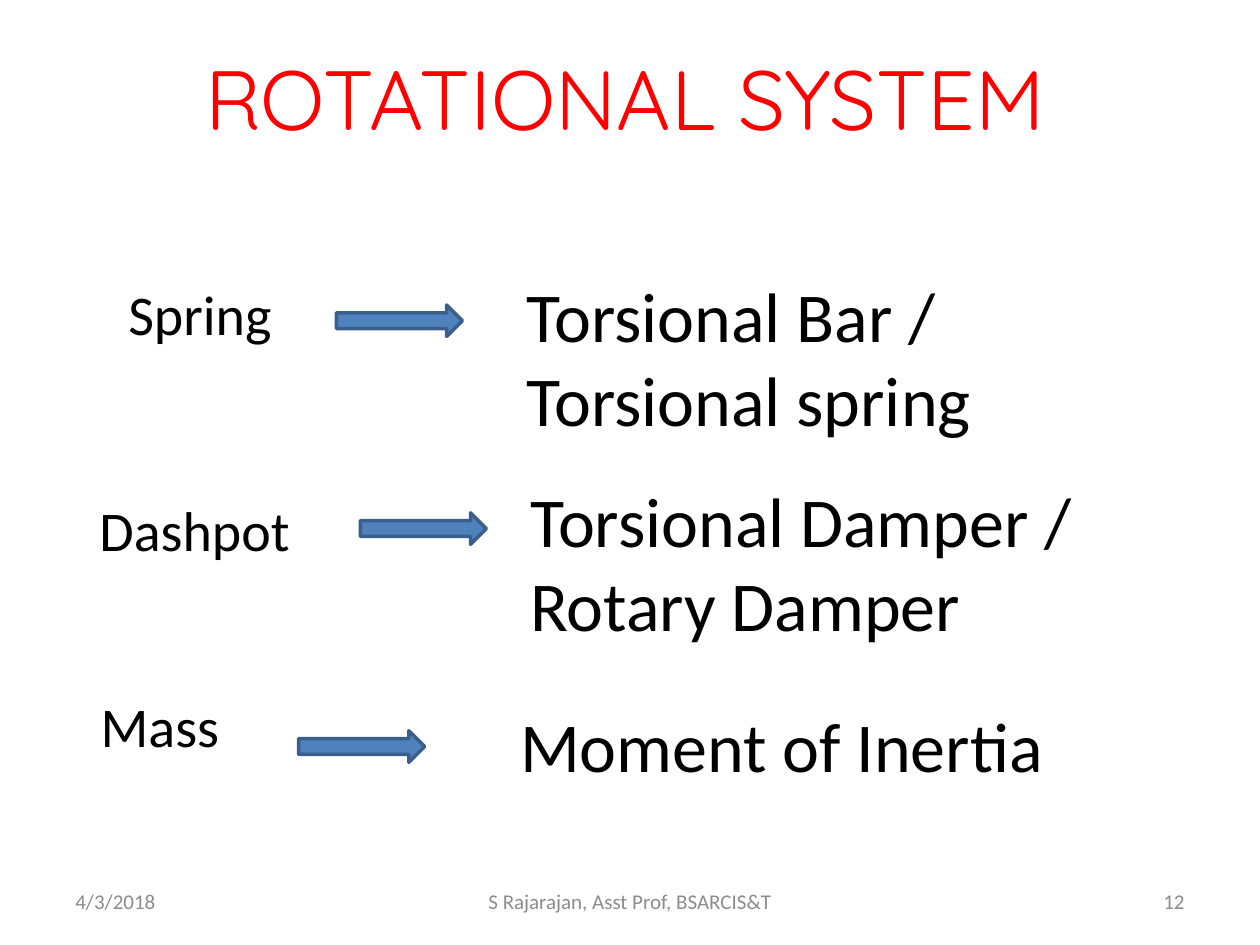
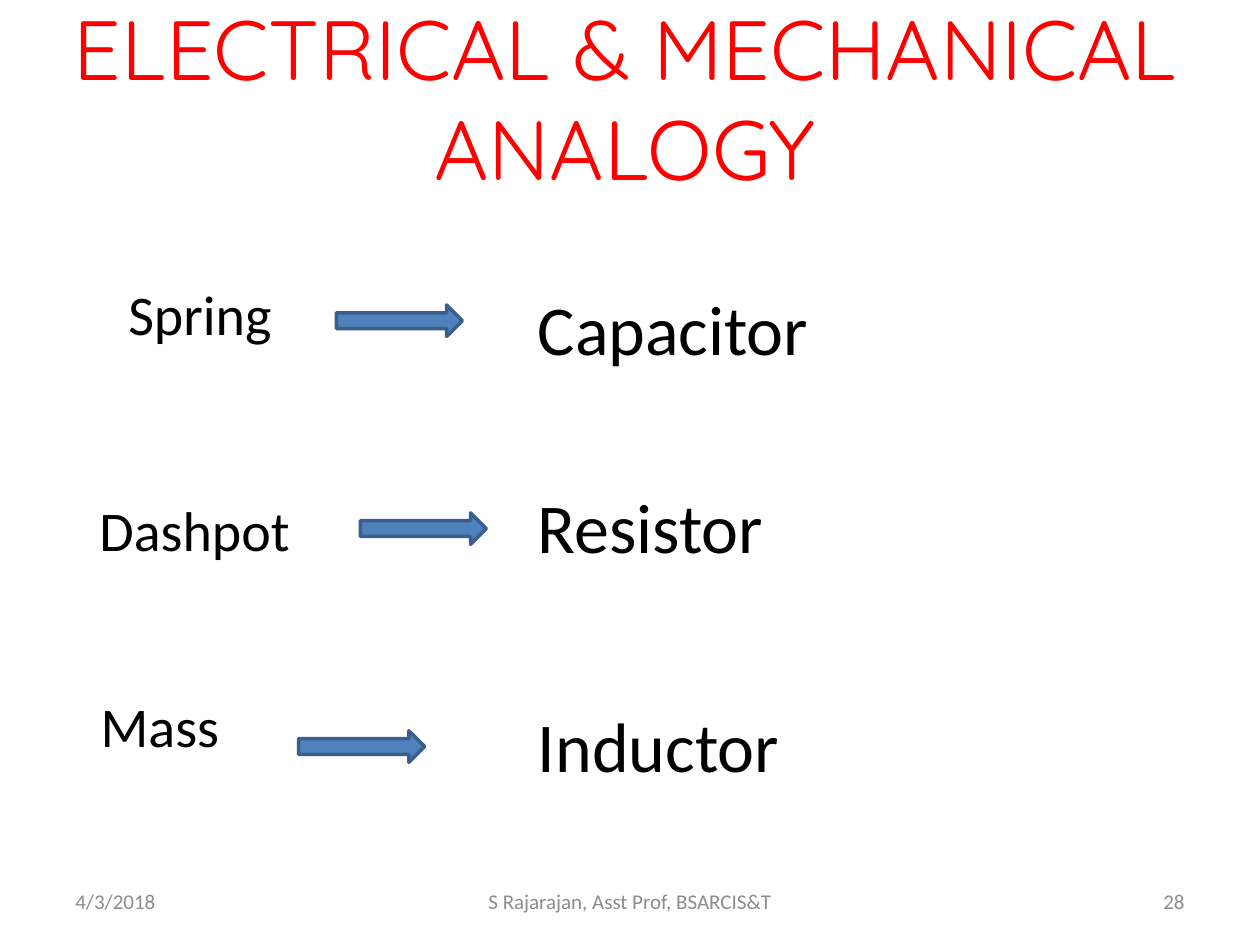
import pptx
import pptx.dml.color
import pptx.enum.shapes
import pptx.enum.text
import pptx.util

Inches = pptx.util.Inches
RGBColor = pptx.dml.color.RGBColor
ALIGN = pptx.enum.text.PP_ALIGN
ANCHOR = pptx.enum.text.MSO_ANCHOR

RED = RGBColor(0xFF, 0x00, 0x00)
BLACK = RGBColor(0x00, 0x00, 0x00)
GRAY = RGBColor(0x8C, 0x8C, 0x8C)
BLUE = RGBColor(0x4F, 0x81, 0xBD)
DARK_BLUE = RGBColor(0x3A, 0x5F, 0x8C)

TITLE_FONT = "Quicksand"
BODY_FONT = "Calibri"

# Boxes are left, top, width, height in inches
TITLE_BOX = (-0.58, 0.52, 11.08, 0.5)
FOOTER_BOX = (0.5, 6.95, 9, 0.4)
BODY_BOX = (0.69, 2.11, 8.4, 4.2)

DATE = "4/3/2018"
AUTHOR = "S Rajarajan, Asst Prof, BSARCIS&T"

# Mechanical elements: name, label box and arrow corner, relative to the body
ELEMENTS = [
    ("Spring", (0.23, 0.06, 1.5, 0.64), (1.98, 0.31)),
    ("Dashpot", (0, 1.77, 1.75, 0.64), (2.17, 1.96)),
    ("Mass", (0.01, 3.33, 1.5, 0.64), (1.68, 3.69)),
]

# Title, slide number, and the counterpart of each element with its box
SLIDES = [
    ("ROTATIONAL SYSTEM", 12, [
        ("Torsional Bar / Torsional spring", (3.39, 0, 4.92, 1.45)),
        ("Torsional Damper / Rotary Damper", (3.42, 1.63, 4.83, 1.45)),
        ("Moment of Inertia", (3.34, 3.42, 4.5, 0.77)),
    ]),
    ("ELECTRICAL & MECHANICAL ANALOGY", 28, [
        ("Capacitor", (3.48, 0.11, 4.5, 0.77)),
        ("Resistor", (3.48, 1.68, 4.83, 0.77)),
        ("Inductor", (3.48, 3.42, 4.92, 0.77)),
    ]),
]


def within(outer, box):
    """Turn a box relative to outer into one relative to the slide."""
    return (outer[0] + box[0], outer[1] + box[1], *box[2:])


def add_text(slide, box, text, size, color=BLACK, font=BODY_FONT,
             align=ALIGN.LEFT, anchor=ANCHOR.TOP):
    shape = slide.shapes.add_textbox(*map(Inches, box))
    frame = shape.text_frame
    frame.word_wrap = True
    frame.vertical_anchor = anchor
    paragraph = frame.paragraphs[0]
    paragraph.text = text
    paragraph.alignment = align
    paragraph.font.size = pptx.util.Pt(size)
    paragraph.font.name = font
    paragraph.font.color.rgb = color


def add_arrow(slide, box):
    shape = slide.shapes.add_shape(
        pptx.enum.shapes.MSO_SHAPE.RIGHT_ARROW, *map(Inches, box))
    shape.shadow.inherit = False
    shape.fill.solid()
    shape.fill.fore_color.rgb = BLUE
    shape.line.color.rgb = DARK_BLUE
    shape.line.width = pptx.util.Pt(2)


def add_title(slide, box, title):
    add_text(slide, box, title, 48, RED, TITLE_FONT, ALIGN.CENTER, ANCHOR.MIDDLE)


def add_footer(slide, box, number):
    width, height = box[2:]
    side, middle = 2.33, 3.17
    parts = [
        (DATE, 0, side, ALIGN.LEFT),
        (AUTHOR, (width - middle) / 2, middle, ALIGN.CENTER),
        (str(number), width - side, side, ALIGN.RIGHT),
    ]
    for text, left, part_width, align in parts:
        add_text(slide, within(box, (left, 0, part_width, height)), text, 12,
                 GRAY, align=align, anchor=ANCHOR.MIDDLE)


def add_analogies(slide, box, counterparts):
    for element, counterpart in zip(ELEMENTS, counterparts):
        name, label_box, arrow_corner = element
        text, text_box = counterpart
        add_text(slide, within(box, label_box), name, 32)
        add_arrow(slide, within(box, (*arrow_corner, 1, 0.25)))
        add_text(slide, within(box, text_box), text, 40)


def main():
    presentation = pptx.Presentation()
    presentation.slide_width = Inches(10)
    presentation.slide_height = Inches(7.5)
    blank = presentation.slide_layouts[6]
    for title, number, counterparts in SLIDES:
        slide = presentation.slides.add_slide(blank)
        add_title(slide, TITLE_BOX, title)
        add_analogies(slide, BODY_BOX, counterparts)
        add_footer(slide, FOOTER_BOX, number)
    presentation.save("out.pptx")


if __name__ == "__main__":
    main()
